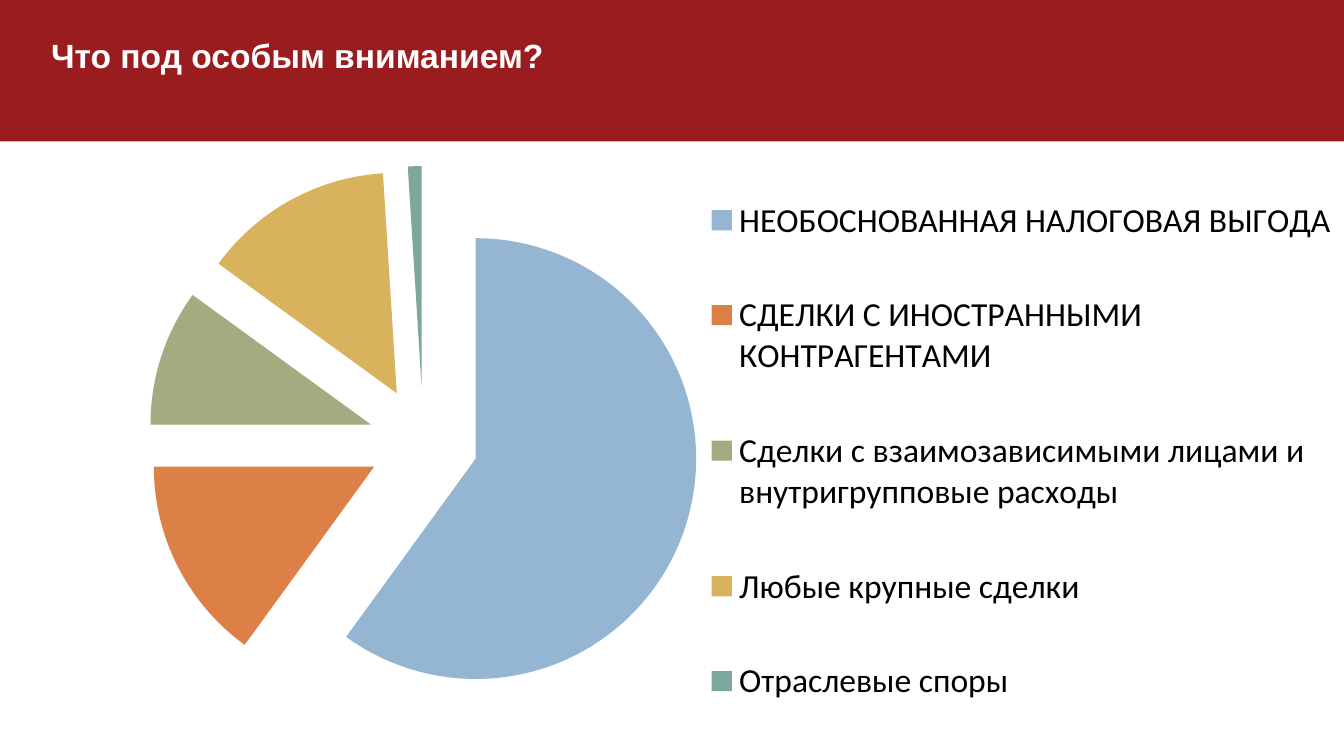
from dataclasses import dataclass

from lxml import etree
from pptx import Presentation
from pptx import util as u
from pptx.chart import data as chart_data
from pptx.dml.color import RGBColor
from pptx.enum import chart as chart_enum
from pptx.enum import shapes, text
from pptx.oxml import ns

PX = 9525
PAGE = (0, 0, 960, 540)
BAND_HEIGHT = 101
CHART_TOP = 104


@dataclass(frozen=True)
class Theme:
    band: str = "9A1C1F"
    title: str = "FFFFFF"
    legend: str = "000000"
    slices: tuple = ("94B6D2", "DD8047", "A5AB81", "D8B25C", "7BA79D")
    title_font: str = "Arial"
    chart_font: str = "Calibri"
    size: int = 18


THEME = Theme()
SHARES = {
    "НЕОБОСНОВАННАЯ НАЛОГОВАЯ ВЫГОДА": 60,
    "СДЕЛКИ С ИНОСТРАННЫМИ КОНТРАГЕНТАМИ": 15,
    "Сделки с взаимозависимыми лицами и внутригрупповые расходы": 10,
    "Любые крупные сделки": 14,
    "Отраслевые споры": 1,
}


def emu(*lengths):
    return [u.Emu(length * PX) for length in lengths]


def style_font(font, name, color, bold=False):
    font.name = name
    font.size = u.Pt(THEME.size)
    font.bold = bold
    font.color.rgb = RGBColor.from_string(color)


def child(parent, tag, value=None):
    node = etree.SubElement(parent, ns.qn(tag))
    if value is not None:
        node.set("val", str(value))
    return node


def make_layout(x, y, width, height, inner=False):
    layout = etree.Element(ns.qn("c:layout"))
    manual = child(layout, "c:manualLayout")
    if inner:
        child(manual, "c:layoutTarget", "inner")
    child(manual, "c:xMode", "edge")
    child(manual, "c:yMode", "edge")
    for tag, value in zip(("c:x", "c:y", "c:w", "c:h"), (x, y, width, height)):
        child(manual, tag, value)
    return layout


def add_header(page, box, title):
    left, top, width, height = box
    band = page.shapes.add_shape(shapes.MSO_SHAPE.RECTANGLE, *emu(*box))
    band.shadow.inherit = False
    band.fill.solid()
    band.fill.fore_color.rgb = RGBColor.from_string(THEME.band)
    band.line.fill.background()
    label = page.shapes.add_textbox(*emu(left + 27, top + 20, 560, 38))
    frame = label.text_frame
    frame.word_wrap = True
    frame.auto_size = text.MSO_AUTO_SIZE.SHAPE_TO_FIT_TEXT
    frame.text = title
    style_font(frame.paragraphs[0].runs[0].font, THEME.title_font, THEME.title, True)


def add_pie(page, box, shares):
    values = chart_data.CategoryChartData()
    values.categories = list(shares)
    values.add_series("Series 1", list(shares.values()))
    chart = page.shapes.add_chart(
        chart_enum.XL_CHART_TYPE.PIE, *emu(*box), values
    ).chart
    chart.has_title = False
    style_font(chart.font, THEME.chart_font, THEME.legend)

    plot = chart.plots[0]
    plot.vary_by_categories = True
    series = plot.series[0]
    for index, color in enumerate(THEME.slices):
        point = series.points[index]
        point.format.fill.solid()
        point.format.fill.fore_color.rgb = RGBColor.from_string(color)
        point.format.line.fill.background()
    explosion = etree.Element(ns.qn("c:explosion"), val="25")
    series._element.find(ns.qn("c:dPt")).addprevious(explosion)

    area = chart._chartSpace.chart.plotArea
    for old in area.findall(ns.qn("c:layout")):
        area.remove(old)
    area.insert(0, make_layout(0.11, 0.02, 0.41, 0.93, inner=True))

    chart.has_legend = True
    legend = chart.legend
    legend.position = chart_enum.XL_LEGEND_POSITION.RIGHT
    legend.include_in_layout = False
    for old in legend._element.findall(ns.qn("c:layout")):
        legend._element.remove(old)
    position = legend._element.find(ns.qn("c:legendPos"))
    position.addnext(make_layout(0.52, 0, 0.48, 1))
    style_font(legend.font, THEME.chart_font, THEME.legend)


def main():
    deck = Presentation()
    left, top, width, height = PAGE
    deck.slide_width, deck.slide_height = emu(width, height)
    page = deck.slides.add_slide(deck.slide_layouts[6])
    add_header(page, (left, top, width, BAND_HEIGHT), "Что под особым вниманием?")
    add_pie(page, (left, CHART_TOP, width, height - CHART_TOP), SHARES)
    deck.save("out.pptx")


if __name__ == "__main__":
    main()
